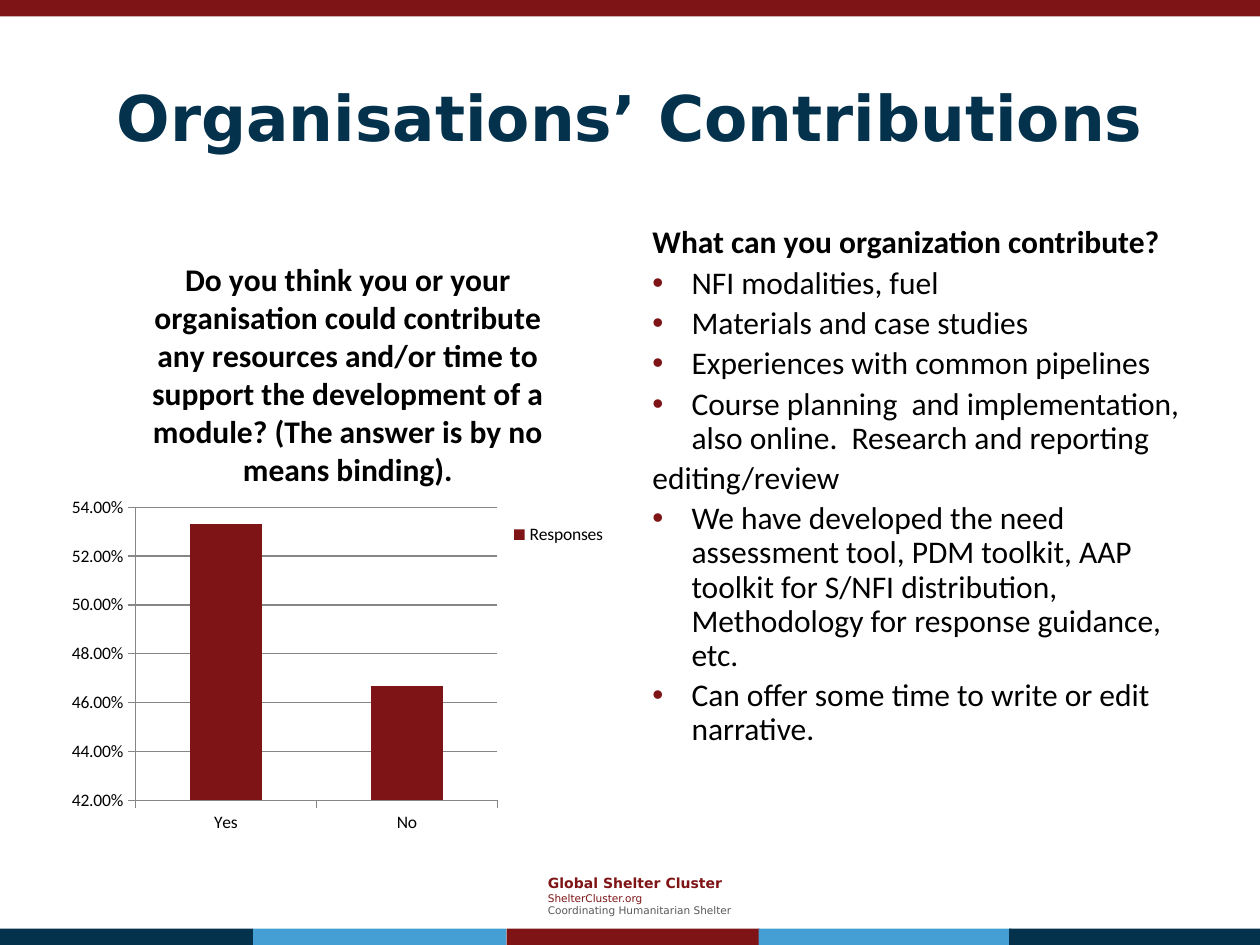
import pptx
import pptx.chart.data
import pptx.dml.color
import pptx.enum.chart
import pptx.enum.text
import pptx.oxml
import pptx.oxml.ns
import pptx.util
from pptx.util import Inches

COLORS = {
    "red": "7F1416",
    "navy": "04314C",
    "blue": "459FD5",
    "gray": "595959",
    "grid": "868686",
    "black": "000000",
}
HEADING_FONT = "DejaVu Sans"
BODY_FONT = "Calibri"
BAND_HEIGHT = 0.13
FOOTER_BANDS = [(0, "navy"), (2.01, "blue"), (4.02, "red"), (6.02, "blue"), (8.01, "navy")]
BAND_WIDTH = 2.01

FOOTER = [
    ("Global Shelter Cluster", 8, "red", True),
    ("ShelterCluster.org", 6, "red", False),
    ("Coordinating Humanitarian Shelter", 6, "gray", False),
]
QUESTION = (
    "Do you think you or your organisation could contribute any resources and/or time "
    "to support the development of a module? (The answer is by no means binding)."
)
# Each line: text, bulleted, bold
CONTRIBUTIONS = [
    ("What can you organization contribute?", False, True),
    ("NFI modalities, fuel", True, False),
    ("Materials and case studies", True, False),
    ("Experiences with common pipelines", True, False),
    ("Course planning  and implementation, also online.  Research and reporting", True, False),
    ("editing/review", False, False),
    ("We have developed the need assessment tool, PDM toolkit, AAP toolkit for S/NFI "
     "distribution, Methodology for response guidance, etc.", True, False),
    ("Can offer some time to write or edit narrative.", True, False),
]


def color(name):
    return pptx.dml.color.RGBColor.from_string(COLORS[name])


def set_attributes(target, values):
    for name, value in values.items():
        setattr(target, name, value)


def set_font(font, name, size, color_name, bold=False):
    set_attributes(font, {"name": name, "size": pptx.util.Pt(size), "bold": bold})
    font.color.rgb = color(color_name)


def add_band(slide, left, top, width, color_name):
    shape = slide.shapes.add_shape(
        pptx.enum.shapes.MSO_SHAPE.RECTANGLE,
        Inches(left), Inches(top), Inches(width), Inches(BAND_HEIGHT))
    shape.shadow.inherit = False
    shape.fill.solid()
    shape.fill.fore_color.rgb = color(color_name)
    shape.line.fill.background()


def add_text_frame(slide, left, top, width, height, anchor):
    box = slide.shapes.add_textbox(Inches(left), Inches(top), Inches(width), Inches(height))
    set_attributes(box.text_frame, {"word_wrap": True, "vertical_anchor": anchor})
    return box.text_frame


def add_paragraphs(frame, texts):
    """Fill the frame with one paragraph per text and return the paragraphs."""
    frame.text = "\n".join(texts)
    return frame.paragraphs


def add_bullet(paragraph):
    properties = paragraph._p.get_or_add_pPr()
    indent = Inches(0.31)
    properties.set("marL", str(indent))
    properties.set("indent", str(-indent))
    namespace = pptx.oxml.ns.nsdecls("a")
    for xml in (
        f'<a:buClr {namespace}><a:srgbClr val="{COLORS["red"]}"/></a:buClr>',
        f'<a:buFont {namespace} typeface="Arial"/>',
        f'<a:buChar {namespace} char="•"/>',
    ):
        properties.append(pptx.oxml.parse_xml(xml))


def add_title(slide):
    frame = add_text_frame(slide, 0.5, 0.3, 9, 1.25, pptx.enum.text.MSO_ANCHOR.MIDDLE)
    paragraph = add_paragraphs(frame, ["Organisations’ Contributions"])[0]
    paragraph.alignment = pptx.enum.text.PP_ALIGN.CENTER
    set_font(paragraph.runs[0].font, HEADING_FONT, 36, "navy", True)


def add_footer(slide):
    frame = add_text_frame(slide, 4.25, 6.89, 1.9, 0.44, pptx.enum.text.MSO_ANCHOR.MIDDLE)
    paragraphs = add_paragraphs(frame, [line[0] for line in FOOTER])
    for paragraph, (_, size, color_name, bold) in zip(paragraphs, FOOTER):
        set_font(paragraph.runs[0].font, HEADING_FONT, size, color_name, bold)


def add_contributions(slide):
    frame = add_text_frame(slide, 5.08, 1.75, 4.42, 4.95, pptx.enum.text.MSO_ANCHOR.TOP)
    paragraphs = add_paragraphs(frame, [line[0] for line in CONTRIBUTIONS])
    for index, (paragraph, (_, bulleted, bold)) in enumerate(zip(paragraphs, CONTRIBUTIONS)):
        paragraph.line_spacing = 0.9
        if index:
            paragraph.space_before = pptx.util.Pt(3.6)
        if bulleted:
            add_bullet(paragraph)
        set_font(paragraph.runs[0].font, BODY_FONT, 18, "black", bold)


def place_chart_part(element, index, values, inner=False):
    """Give a chart part a manual layout, as fractions of the chart's size."""
    for old in element.findall(pptx.oxml.ns.qn("c:layout")):
        element.remove(old)
    target = '<c:layoutTarget val="inner"/>' if inner else ""
    modes = "".join(f'<c:{axis}Mode val="edge"/>' for axis in "xy")
    sizes = "".join(f'<c:{name} val="{value}"/>' for name, value in values.items())
    element.insert(index, pptx.oxml.parse_xml(
        f'<c:layout {pptx.oxml.ns.nsdecls("c")}><c:manualLayout>'
        f'{target}{modes}{sizes}</c:manualLayout></c:layout>'))


def add_response_chart(slide):
    data = pptx.chart.data.CategoryChartData(number_format="0.00%")
    data.categories = ["Yes", "No"]
    data.add_series("Responses", [0.533, 0.467])
    chart = slide.shapes.add_chart(
        pptx.enum.chart.XL_CHART_TYPE.COLUMN_CLUSTERED,
        Inches(0.5), Inches(1.75), Inches(4.42), Inches(4.95), data).chart
    set_font(chart.font, BODY_FONT, 10, "black")

    title_frame = chart.chart_title.text_frame
    title_frame.text = QUESTION
    set_font(title_frame.paragraphs[0].runs[0].font, BODY_FONT, 18, "black", True)

    chart.has_legend = True
    set_attributes(chart.legend, {
        "position": pptx.enum.chart.XL_LEGEND_POSITION.RIGHT, "include_in_layout": False})

    plot = chart.plots[0]
    set_attributes(plot, {"gap_width": 150, "vary_by_categories": False})
    fill = plot.series[0].format.fill
    fill.solid()
    fill.fore_color.rgb = color("red")

    value_axis = chart.value_axis
    set_attributes(value_axis, {
        "minimum_scale": 0.42, "maximum_scale": 0.54, "major_unit": 0.02,
        "has_major_gridlines": True})
    set_attributes(value_axis.tick_labels, {
        "number_format": "0.00%", "number_format_is_linked": False})
    for axis in (value_axis, chart.category_axis):
        axis.major_tick_mark = pptx.enum.chart.XL_TICK_MARK.OUTSIDE
    for line in (value_axis.format.line, chart.category_axis.format.line,
                 value_axis.major_gridlines.format.line):
        line.color.rgb = color("grid")
        line.width = pptx.util.Pt(0.75)

    plot_area = chart._chartSpace.chart.plotArea
    place_chart_part(plot_area, 0, {"x": 0.13, "y": 0.46, "w": 0.65, "h": 0.47}, inner=True)
    place_chart_part(chart.legend._element, 1, {"x": 0.8, "y": 0.48})
    place_chart_part(chart.chart_title._element, 1, {"x": 0.15, "y": 0.05})


def main():
    presentation = pptx.Presentation()
    set_attributes(presentation, {"slide_width": Inches(10), "slide_height": Inches(7.5)})
    slide = presentation.slides.add_slide(presentation.slide_layouts[6])
    add_footer(slide)
    add_band(slide, 0, 0, 10, "red")
    for left, color_name in FOOTER_BANDS:
        add_band(slide, left, 7.5 - BAND_HEIGHT, BAND_WIDTH, color_name)
    add_title(slide)
    add_contributions(slide)
    add_response_chart(slide)
    presentation.save("out.pptx")


if __name__ == "__main__":
    main()
